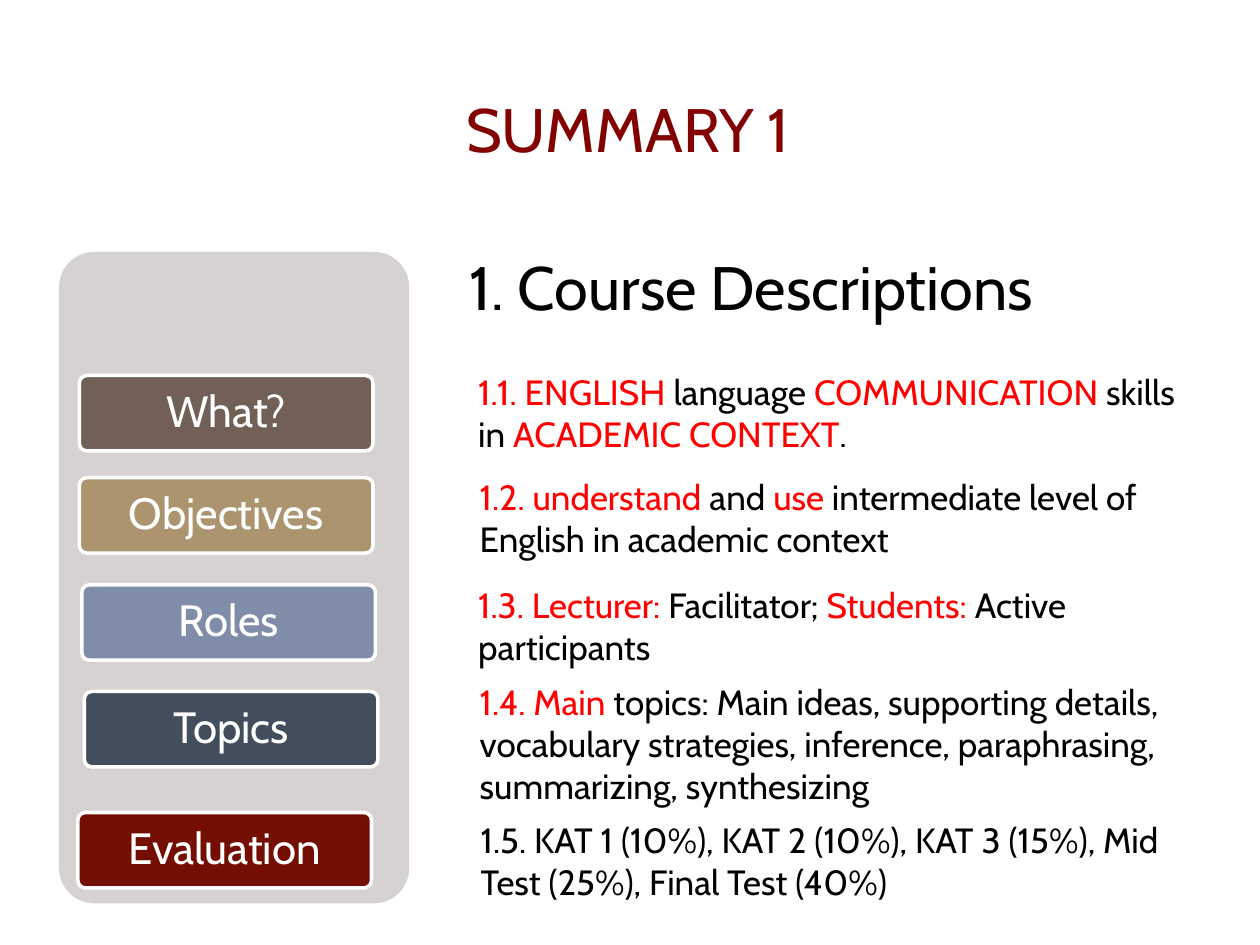
"""Build the course summary slide."""
from pptx import Presentation
from pptx.dml.color import RGBColor
from pptx.enum.shapes import MSO_SHAPE as Shape
from pptx.enum.text import MSO_ANCHOR as Anchor, MSO_AUTO_SIZE as Fit, PP_ALIGN as Align
from pptx.util import Cm, Pt

FONT = "Cabin"
BLACK = RGBColor(0, 0, 0)
WHITE = RGBColor(255, 255, 255)
RED = RGBColor(255, 0, 0)
WINE = RGBColor(0x82, 0x01, 0x01)
GREY = RGBColor(0xD5, 0xD2, 0xD1)
BROWN = RGBColor(0x72, 0x60, 0x56)
TAN = RGBColor(0xAC, 0x95, 0x6E)
BLUE = RGBColor(0x80, 0x8D, 0xA9)
SLATE = RGBColor(0x42, 0x4E, 0x5B)
MAROON = RGBColor(0x73, 0x0E, 0x00)

TABS = [
    ("What?", 1.6, 7.57, BROWN),
    ("Objectives", 1.6, 9.63, TAN),
    ("Roles", 1.65, 11.79, BLUE),
    ("Topics", 1.7, 13.94, SLATE),
    ("Evaluation", 1.57, 16.38, MAROON),
]
ITEMS = [
    ((9.09, 7.34, 15.04, 1.96),
     [("1.1. ENGLISH ", RED), ("language", BLACK), (" COMMUNICATION ", RED),
      ("skills in ", BLACK), ("ACADEMIC CONTEXT", RED), (".", BLACK)]),
    ((9.12, 9.47, 15.04, 1.96),
     [("1.2. understand ", RED), ("and ", BLACK), ("use ", RED),
      ("intermediate level of English in academic context", BLACK)]),
    ((9.09, 11.63, 15.88, 1.96),
     [("1.3. Lecturer: ", RED), ("Facilitator; ", BLACK),
      ("Students: ", RED), ("Active participants", BLACK)]),
    ((9.12, 13.59, 15.85, 2.82),
     [("1.4. Main ", RED),
      ("topics: Main ideas, supporting details, vocabulary strategies, "
       "inference, paraphrasing, summarizing, synthesizing", BLACK)]),
    ((9.14, 16.38, 15.39, 1.96),
     [("1.5. KAT 1 (10%), KAT 2 (10%), KAT 3 (15%), Mid Test (25%), "
       "Final Test (40%)", BLACK)]),
]


class Deck:
    """Hold the text style and the current slide."""

    def __init__(self, slide, font):
        self.slide = slide
        self.font = font

    def put(self, obj, values):
        for name, value in values.items():
            setattr(obj, name, value)

    def label(self, shape, runs, size, frame, para):
        text = shape.text_frame
        self.put(text, {"word_wrap": True, "auto_size": Fit.NONE} | frame)
        line = text.paragraphs[0]
        self.put(line, para)
        for words, color in runs:
            run = line.add_run()
            run.text = words
            self.put(run.font, {"name": self.font, "size": Pt(size)})
            run.font.color.rgb = color
        return line

    def title(self, words, box):
        shape = self.slide.shapes.title
        self.put(shape, dict(zip(("left", "top", "width", "height"), map(Cm, box))))
        self.label(shape, [(words, WINE)], 35,
                   {"vertical_anchor": Anchor.MIDDLE}, {"alignment": Align.CENTER})

    def text(self, box, runs, size, frame, para):
        shape = self.slide.shapes.add_textbox(*map(Cm, box))
        return self.label(shape, runs, size, frame, para)

    def head(self, words, box):
        sides = ("left", "top", "right", "bottom")
        frame = {f"margin_{side}": Cm(0.38) for side in sides}
        self.text(box, [(words, BLACK)], 35,
                  frame | {"vertical_anchor": Anchor.MIDDLE}, {"line_spacing": 0.9})

    def item(self, box, runs):
        line = self.text(box, runs, 20, {"auto_size": Fit.SHAPE_TO_FIT_TEXT}, {})
        line._p.get_or_add_pPr().set("marL", str(Cm(0.3)))

    def panel(self, box, color):
        shape = self.slide.shapes.add_shape(Shape.ROUNDED_RECTANGLE, *map(Cm, box))
        shape.adjustments[0] = 0.1
        shape.shadow.inherit = False
        shape.fill.solid()
        shape.fill.fore_color.rgb = color
        shape.line.fill.background()
        return shape

    def tab(self, words, left, top, color):
        shape = self.panel((left, top, 5.92, 1.52), color)
        shape.line.color.rgb = WHITE
        shape.line.width = Pt(2)
        self.label(shape, [(words, WHITE)], 25, {"vertical_anchor": Anchor.MIDDLE},
                   {"alignment": Align.CENTER, "line_spacing": 0.9})


def main():
    show = Presentation()
    show.slide_width, show.slide_height = Cm(25.4), Cm(19.05)
    deck = Deck(show.slides.add_slide(show.slide_layouts[5]), FONT)
    deck.title("SUMMARY 1", (1.19, 1.14, 22.94, 2.9))
    deck.panel((1.19, 5.08, 7.06, 13.13), GREY)
    for tab in TABS:
        deck.tab(*tab)
    deck.head("1. Course Descriptions", (9.09, 4.55, 15.42, 2.64))
    for item in ITEMS:
        deck.item(*item)
    show.save("out.pptx")


if __name__ == "__main__":
    main()
